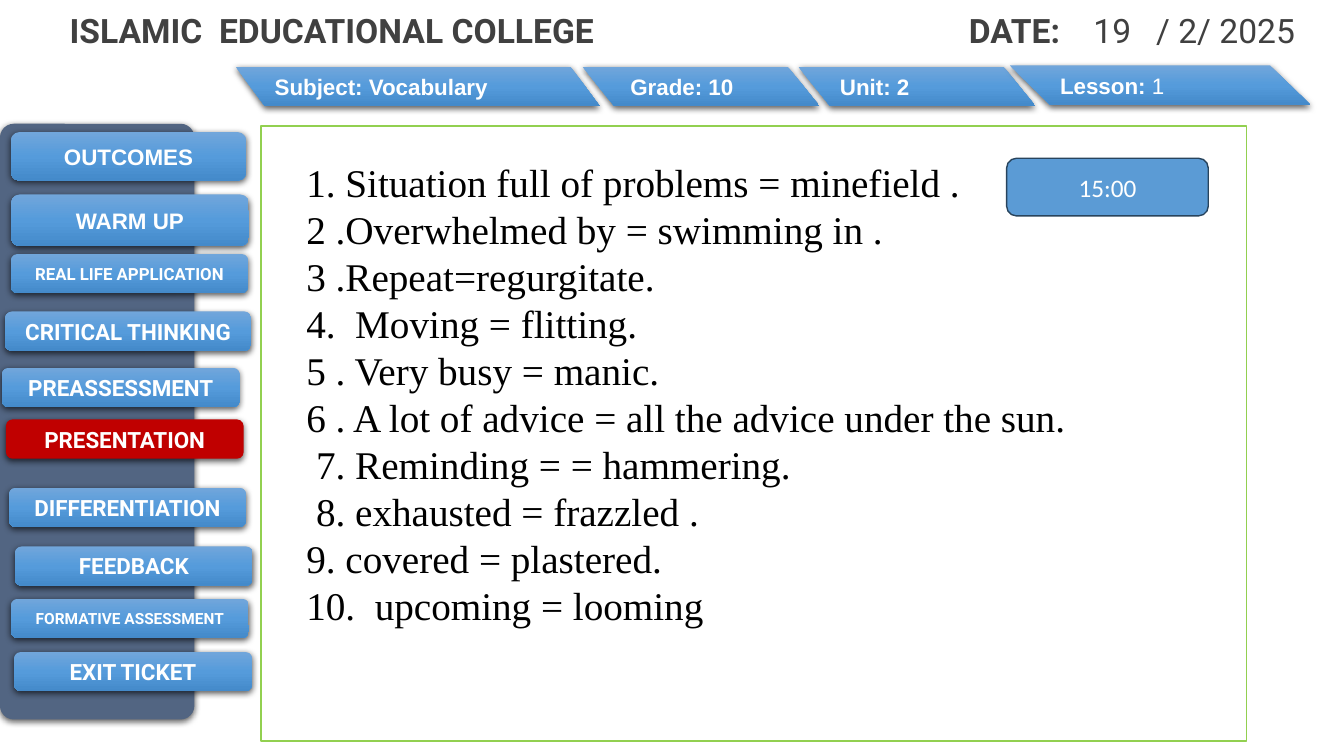
from lxml import etree
from pptx import Presentation
from pptx import util as u
from pptx.dml.color import RGBColor
from pptx.enum import shapes, text
from pptx.oxml import ns

COLOURS = {
    "panel": "526582", "active": "C00000", "frame": "92D050",
    "timer": "5B9BD5", "timer_line": "28445D",
    "title": "404040", "body": "000000", "light": "FFFFFF",
    "grad_top": "71A6DB", "grad_mid": "559BDB", "grad_end": "448ACA",
}
GRADIENT = (("grad_top", 0), ("grad_mid", 50000), ("grad_end", 100000))
SHAPE = shapes.MSO_SHAPE
ALIGN = text.PP_ALIGN

# label, left, top, width, height (cm), size, font
NAV_BUTTONS = [
    ("OUTCOMES", 0.28, 3.33, 5.92, 1.22, 16, "Arial"),
    ("WARM UP", 0.28, 4.9, 5.99, 1.3, 16, "Arial"),
    ("REAL LIFE APPLICATION", 0.28, 6.4, 5.97, 0.99, 12, "Roboto"),
    ("CRITICAL THINKING", 0.13, 7.85, 6.2, 0.99, 16, "Roboto"),
    ("PREASSESSMENT", 0.05, 9.27, 5.99, 0.99, 16, "Roboto"),
    ("PRESENTATION", 0.15, 10.57, 5.99, 0.99, 16, "Roboto"),
    ("DIFFERENTIATION", 0.23, 12.29, 5.97, 0.99, 16, "Roboto"),
    ("FEEDBACK", 0.38, 13.77, 5.99, 0.99, 16, "Roboto"),
    ("FORMATIVE ASSESSMENT", 0.28, 15.09, 5.99, 0.99, 11, "Roboto"),
    ("EXIT TICKET", 0.36, 16.43, 5.99, 0.99, 16, "Roboto"),
]
# label, value in regular weight, left, top, width (cm), slant
RIBBONS = [
    ("Unit: 2", "", 20.12, 1.68, 5.97, 0.067),
    (" Grade: 10", "", 14.68, 1.68, 5.97, 0.067),
    ("Subject: Vocabulary", "", 5.94, 1.68, 9.17, 0.04),
    ("Lesson: ", "1", 25.45, 1.65, 7.57, 0.067),
]
VOCABULARY = [
    "1. Situation full of problems = minefield .",
    "2 .Overwhelmed by = swimming in .",
    "3 .Repeat=regurgitate.",
    "4.  Moving = flitting.",
    "5 . Very busy = manic.",
    "6 . A lot of advice = all the advice under the sun.",
    " 7. Reminding = = hammering.",
    " 8. exhausted = frazzled .",
    "9. covered = plastered.",
    "10.  upcoming = looming",
]


def rgb(name):
    return RGBColor.from_string(COLOURS[name])


def child(parent, tag, **attributes):
    return etree.SubElement(parent, ns.qn(tag), attributes)


def add_span(para, words, size=16, font="Arial", colour="light", bold=False):
    span = para.add_run()
    span.text = words
    span.font.size = u.Pt(size)
    span.font.name = font
    span.font.bold = bold
    span.font.color.rgb = rgb(colour)


def add_box(page, kind, left, top, width, height, fill=None, line=None, adjust=()):
    """Preset shape, in cm, with a flat shadow-free look."""
    box = page.shapes.add_shape(kind, u.Cm(left), u.Cm(top), u.Cm(width), u.Cm(height))
    box.shadow.inherit = False
    for index, value in enumerate(adjust):
        box.adjustments[index] = value
    if fill:
        box.fill.solid()
        box.fill.fore_color.rgb = rgb(fill)
    else:
        box.fill.background()
    if line:
        box.line.color.rgb = rgb(line)
        box.line.width = u.Pt(1)
    else:
        box.line.fill.background()
    box.text_frame.vertical_anchor = text.MSO_ANCHOR.MIDDLE
    return box


def add_shadow(box):
    effects = box._element.spPr.find(ns.qn("a:effectLst"))
    shadow = child(effects, "a:outerShdw", blurRad="57150", dist="19050",
                   dir="5400000", algn="ctr", rotWithShape="0")
    colour = child(shadow, "a:srgbClr", val="000000")
    child(colour, "a:alpha", val="63000")


def add_gradient(box):
    box.fill.gradient()
    gradient = box._element.spPr.find(ns.qn("a:gradFill"))
    for part in list(gradient):
        gradient.remove(part)
    stops = child(gradient, "a:gsLst")
    for name, position in GRADIENT:
        stop = child(stops, "a:gs", pos=str(position))
        child(stop, "a:srgbClr", val=COLOURS[name])
    child(gradient, "a:lin", ang="5400000", scaled="0")


def add_button(page, label, left, top, width, height, size, font):
    active = label == "PRESENTATION"
    box = add_box(page, SHAPE.ROUNDED_RECTANGLE, left, top, width, height, fill="active")
    if not active:
        add_gradient(box)
    add_shadow(box)
    para = box.text_frame.paragraphs[0]
    para.alignment = ALIGN.CENTER
    add_span(para, label, size=size, font=font, bold=True)


def add_ribbon(page, label, value, left, top, width, slant):
    box = add_box(page, SHAPE.DOUBLE_WAVE, left, top, width, 0.99, adjust=(0, slant))
    add_gradient(box)
    add_shadow(box)
    para = box.text_frame.paragraphs[0]
    para.alignment = ALIGN.LEFT
    add_span(para, label, bold=True)
    if value:
        add_span(para, value)


def format_title(page):
    title = page.shapes.title
    title.left, title.top = u.Cm(1.5), u.Cm(0.13)
    title.width, title.height = u.Cm(32), u.Cm(1.32)
    frame = title.text_frame
    frame.vertical_anchor = text.MSO_ANCHOR.TOP
    frame.auto_size = text.MSO_AUTO_SIZE.NONE
    para = frame.paragraphs[0]
    para.alignment = ALIGN.LEFT
    # The date starts at its own tab stop
    tabs = child(para._p.get_or_add_pPr(), "a:tabLst")
    child(tabs, "a:tab", pos=str(u.Cm(22.66)), algn="l")
    look = {"size": 24, "font": "Roboto", "colour": "title"}
    add_span(para, "ISLAMIC  EDUCATIONAL COLLEGE\tDATE: ", bold=True, **look)
    add_span(para, "   19   / 2/ 2025", **look)


def add_vocabulary(page):
    box = page.shapes.add_textbox(u.Cm(7.47), u.Cm(3.86), u.Cm(24.84), u.Cm(12.22))
    frame = box.text_frame
    frame.word_wrap = True
    for index, words in enumerate(VOCABULARY):
        para = frame.add_paragraph() if index else frame.paragraphs[0]
        para.line_spacing = u.Pt(33.6)
        add_span(para, words, size=28, font="Times New Roman", colour="body")


def add_timer(page):
    box = add_box(page, SHAPE.ROUNDED_RECTANGLE, 25.37, 3.99, 5.08, 1.45,
                  fill="timer", line="timer_line")
    para = box.text_frame.paragraphs[0]
    para.alignment = ALIGN.CENTER
    add_span(para, "15:00", size=18, font="Calibri")


def main():
    deck = Presentation()
    deck.slide_width, deck.slide_height = u.Cm(33.87), u.Cm(19.05)
    page = deck.slides.add_slide(deck.slide_layouts[5])
    format_title(page)

    # Side navigation
    panel = add_box(page, SHAPE.ROUNDED_RECTANGLE, 0, 3.12, 4.9, 15.01,
                    fill="panel", adjust=(0.071,))
    add_shadow(panel)
    for button in NAV_BUTTONS:
        add_button(page, *button)

    # Lesson details
    for ribbon in RIBBONS:
        add_ribbon(page, *ribbon)

    # Content area
    add_box(page, SHAPE.RECTANGLE, 6.58, 3.18, 24.84, 15.49, line="frame")
    add_vocabulary(page)
    add_timer(page)

    deck.save("out.pptx")


if __name__ == "__main__":
    main()
